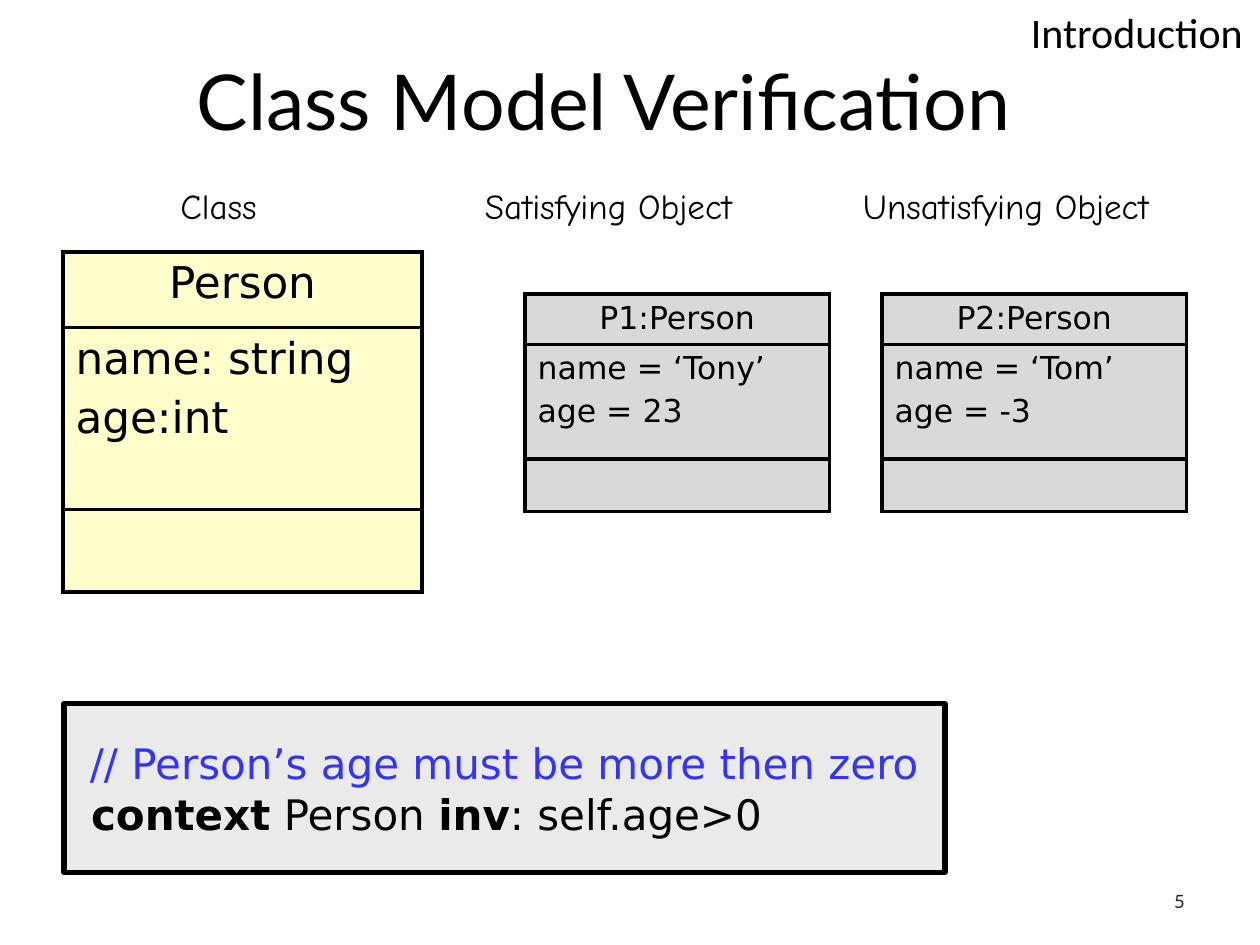
from dataclasses import dataclass

from lxml.etree import SubElement
from pptx import Presentation
from pptx.dml.color import RGBColor
from pptx.enum.shapes import MSO_SHAPE as Shape
from pptx.enum.text import MSO_ANCHOR as Anchor, PP_ALIGN as Align
from pptx.oxml.ns import qn
from pptx.util import Inches, Pt

BLACK = RGBColor(0x00, 0x00, 0x00)
DARK = RGBColor(0x26, 0x26, 0x26)
YELLOW = RGBColor(0xFF, 0xFF, 0xCC)
GREY = RGBColor(0xD9, 0xD9, 0xD9)
PALE = RGBColor(0xEA, 0xEA, 0xEA)
BLUE = RGBColor(0x33, 0x33, 0xFF)
UML_FONT = "DejaVu Sans"
COLS, ROWS = 120, 90  # slide grid of square units, 12 to the inch


def units(n: float) -> int:
    return Inches(n / 12)


@dataclass
class Label:
    text: str
    box: tuple  # left, top, width, height in grid units
    font: str
    size: float
    color: RGBColor = BLACK
    align: Align = Align.LEFT
    anchor: Anchor = Anchor.TOP


@dataclass
class UmlBox:
    name: str
    attributes: str
    left: float
    top: float
    width: float
    heights: tuple  # name, attributes, operations
    size: float
    fill: RGBColor


LABELS = [
    Label("Class", (16, 17, 18, 5.2), "Comic Neue", 20),
    Label("Satisfying Object", (45, 17, 37, 5.2), "Comic Neue", 20),
    Label("Unsatisfying Object", (81, 17, 36, 5.2), "Comic Neue", 20),
    Label("5", (86, 83.4, 28, 4.8), "Lato", 10.5, DARK, Align.RIGHT, Anchor.MIDDLE),
    Label("Introduction", (97, 0, 23, 6), "Calibri", 24),
]

OBJECT_STYLE = dict(top=28, width=29, heights=(4.8, 10.9, 5), size=18, fill=GREY)
UML_BOXES = [
    UmlBox("Person", "name: string\nage:int", 6, 24, 34.2, (7.2, 17.3, 7.9), 25, YELLOW),
    UmlBox("P1:Person", "name = ‘Tony’\nage = 23", 50, **OBJECT_STYLE),
    UmlBox("P2:Person", "name = ‘Tom’\nage = -3", 84, **OBJECT_STYLE),
]

# Lines of (text, colour, bold) runs
CONSTRAINT = [
    [(" // Person’s age must be more then zero", BLUE, False)],
    [(" context", BLACK, True), (" Person ", BLACK, False),
     ("inv", BLACK, True), (": self.age>0", BLACK, False)],
]


def style(font, name: str, size: float, color: RGBColor, bold: bool = False) -> None:
    font.name, font.size, font.bold = name, Pt(size), bold
    font.color.rgb = color


def place(sp, box: tuple) -> None:
    sp.left, sp.top, sp.width, sp.height = map(units, box)


def add_label(s, label: Label) -> None:
    tf = s.shapes.add_textbox(*map(units, label.box)).text_frame
    tf.word_wrap, tf.vertical_anchor = True, label.anchor
    tf.text = label.text
    p = tf.paragraphs[0]
    p.alignment = label.align
    style(p.runs[0].font, label.font, label.size, label.color)


def add_borders(cell) -> None:
    tc_pr = cell._tc.get_or_add_tcPr()
    for side in ("lnL", "lnR", "lnT", "lnB"):
        ln = SubElement(tc_pr, qn(f"a:{side}"), w=str(Pt(2.25)))
        fill = SubElement(ln, qn("a:solidFill"))
        SubElement(fill, qn("a:srgbClr"), val=str(BLACK))


def add_uml_box(s, uml: UmlBox) -> None:
    box = (uml.left, uml.top, uml.width, sum(uml.heights))
    table = s.shapes.add_table(3, 1, *map(units, box)).table
    for i, (height, text) in enumerate(zip(uml.heights, (uml.name, uml.attributes, ""))):
        table.rows[i].height = units(height)
        cell = table.cell(i, 0)
        add_borders(cell)
        cell.fill.solid()
        cell.fill.fore_color.rgb = uml.fill
        cell.text_frame.text = text
        for n, p in enumerate(cell.text_frame.paragraphs):
            p.alignment = Align.CENTER if i == 0 else Align.LEFT
            if n:
                p.space_before = Pt(uml.size * 0.2)
            for r in p.runs:
                style(r.font, UML_FONT, uml.size, BLACK)


def add_constraint(s) -> None:
    sp = s.shapes.add_shape(Shape.RECTANGLE, *map(units, (6.1, 67, 83.9, 16.1)))
    sp.shadow.inherit = False
    sp.fill.solid()
    sp.fill.fore_color.rgb = PALE
    sp.line.color.rgb = BLACK
    sp.line.width = Pt(3)
    tf = sp.text_frame
    tf.word_wrap, tf.vertical_anchor = True, Anchor.MIDDLE
    for i, line in enumerate(CONSTRAINT):
        p = tf.add_paragraph() if i else tf.paragraphs[0]
        p.alignment = Align.LEFT
        for text, color, bold in line:
            r = p.add_run()
            r.text = text
            style(r.font, UML_FONT, 24, color, bold)


def main() -> None:
    prs = Presentation()
    prs.slide_width, prs.slide_height = units(COLS), units(ROWS)
    s = prs.slides.add_slide(prs.slide_layouts[5])

    # Title
    title = s.shapes.title
    place(title, (4, 2, 107, 15))
    tf = title.text_frame
    tf.text = "Class Model Verification"
    tf.vertical_anchor = Anchor.MIDDLE
    tf.paragraphs[0].alignment = Align.CENTER
    style(tf.paragraphs[0].runs[0].font, "Lato", 44, BLACK)

    # Class, its objects and the invariant
    for uml in UML_BOXES:
        add_uml_box(s, uml)
    add_constraint(s)

    # Captions, section name and page number
    for label in LABELS:
        add_label(s, label)

    prs.save("out.pptx")


if __name__ == "__main__":
    main()
